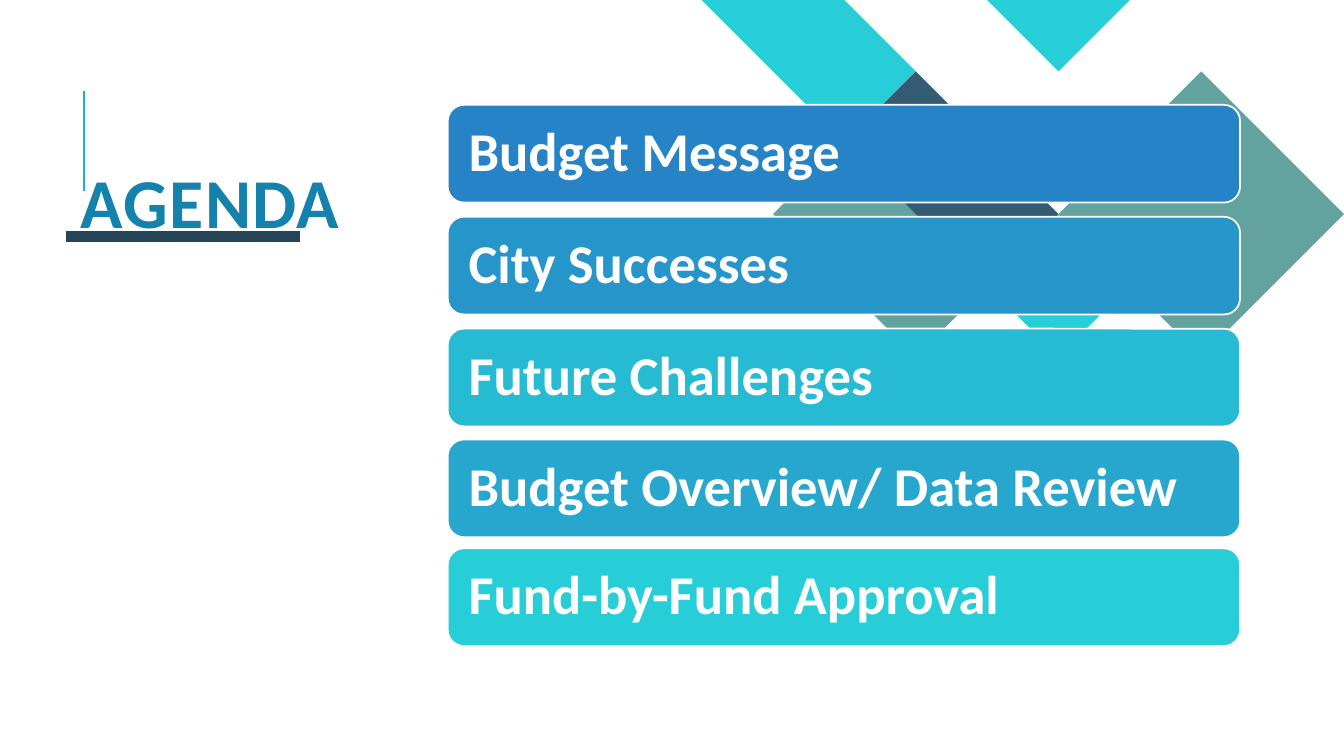
"""Build the agenda slide with its diamond pattern and five topic bars."""

import dataclasses

import lxml.etree
import pptx
import pptx.dml.color
import pptx.enum.shapes
import pptx.enum.text
import pptx.oxml.ns
import pptx.shapes.autoshape
import pptx.slide
import pptx.text.text
import pptx.util

SLIDE_WIDTH = pptx.util.Inches(13.33)
SLIDE_HEIGHT = pptx.util.Inches(7.5)
LATTICE_STEP = pptx.util.Emu(round(SLIDE_HEIGHT * 0.472 / 5))
LATTICE_LEFT = SLIDE_WIDTH - 9 * LATTICE_STEP
BAR_LEFT, BAR_WIDTH, BAR_HEIGHT = 33.31, 58.96, 12.93

Point = tuple[int, int]


@dataclasses.dataclass(frozen=True)
class Tile:
    """One pattern colour with outlines in lattice columns and rows."""

    color: str
    outlines: tuple[tuple[Point, ...], ...]


@dataclasses.dataclass(frozen=True)
class Rule:
    """A straight line with ends in percent of the slide."""

    start: tuple[float, float]
    end: tuple[float, float]
    color: str
    weight: float


@dataclasses.dataclass(frozen=True)
class Bar:
    """One agenda topic with its top in percent of the slide height."""

    topic: str
    top: float
    color: str


TILES = (
    Tile("27CED7", (((3, 1), (2, 0), (0, 0), (2, 2)), ((6, 4), (5, 3), (4, 4), (5, 5)))),
    Tile("62A39F", (((2, 2), (1, 3), (3, 5), (4, 4)),)),
    Tile("27CED7", (((6, 0), (4, 0), (5, 1)),)),
    Tile("335B74", (((3, 1), (2, 2), (4, 4), (5, 3)),)),
    Tile("62A39F", (((9, 3), (7, 1), (5, 3), (7, 5)),)),
)
RULES = (
    Rule((6.23, 25.33), (6.23, 12), "1CADE4", 1.5),
    Rule((4.88, 31.33), (22.36, 31.33), "264457", 8),
)
BARS = (
    Bar("Budget Message", 13.87, "2683C6"),
    Bar("City Successes", 28.67, "2695CA"),
    Bar("Future Challenges", 43.47, "27BAD3"),
    Bar("Budget Overview/ Data Review", 58.13, "27A7CE"),
    Bar("Fund-by-Fund Approval", 72.53, "27CED7"),
)


def across(percent: float) -> pptx.util.Emu:
    """Return a share of the slide width."""
    return pptx.util.Emu(round(SLIDE_WIDTH * percent / 100))


def down(percent: float) -> pptx.util.Emu:
    """Return a share of the slide height."""
    return pptx.util.Emu(round(SLIDE_HEIGHT * percent / 100))


def rgb(color: str) -> pptx.dml.color.RGBColor:
    """Turn a hex string into a colour."""
    return pptx.dml.color.RGBColor.from_string(color)


def write(frame: pptx.text.text.TextFrame, text: str, *, size: float, color: str,
          line_spacing: float, inset: float, tracking: float = 0) -> None:
    """Fill a text frame with one bold, left-aligned paragraph."""
    frame.word_wrap = True
    frame.auto_size = pptx.enum.text.MSO_AUTO_SIZE.NONE
    frame.vertical_anchor = pptx.enum.text.MSO_ANCHOR.MIDDLE
    frame.margin_left = frame.margin_right = across(inset)
    para = frame.paragraphs[0]
    para.alignment = pptx.enum.text.PP_ALIGN.LEFT
    para.line_spacing = line_spacing
    span = para.add_run()
    span.text = text
    span.font.name = "Calibri"
    span.font.size = pptx.util.Pt(size)
    span.font.bold = True
    span.font.color.rgb = rgb(color)
    if tracking:
        span.font._element.set("spc", str(round(tracking * 100)))


def draw_tile(page: pptx.slide.Slide, tile: Tile) -> None:
    """Draw the outlines of a tile as one filled freeform."""
    contours = [
        [(LATTICE_LEFT + column * LATTICE_STEP, row * LATTICE_STEP) for column, row in outline]
        for outline in tile.outlines
    ]
    builder = page.shapes.build_freeform(*contours[0][0])
    for index, contour in enumerate(contours):
        if index:
            builder.move_to(*contour[0])
        builder.add_line_segments(contour[1:], close=True)
    shape = builder.convert_to_shape()
    shape.shadow.inherit = False
    shape.fill.solid()
    shape.fill.fore_color.rgb = rgb(tile.color)
    shape.line.fill.background()


def draw_rule(page: pptx.slide.Slide, rule: Rule) -> None:
    """Draw a straight line without a shadow."""
    line = page.shapes.add_connector(
        pptx.enum.shapes.MSO_CONNECTOR.STRAIGHT,
        across(rule.start[0]), down(rule.start[1]), across(rule.end[0]), down(rule.end[1]),
    )
    line.line.color.rgb = rgb(rule.color)
    line.line.width = pptx.util.Pt(rule.weight)
    lxml.etree.SubElement(line._element.spPr, pptx.oxml.ns.qn("a:effectLst"))


def draw_bar(page: pptx.slide.Slide, bar: Bar) -> None:
    """Draw a rounded bar holding its topic."""
    box = page.shapes.add_shape(
        pptx.enum.shapes.MSO_SHAPE.ROUNDED_RECTANGLE,
        across(BAR_LEFT), down(bar.top), across(BAR_WIDTH), down(BAR_HEIGHT),
    )
    box.shadow.inherit = False
    box.fill.solid()
    box.fill.fore_color.rgb = rgb(bar.color)
    box.line.color.rgb = rgb("FFFFFF")
    box.line.width = pptx.util.Pt(1.25)
    write(box.text_frame, bar.topic, size=39, color="FFFFFF", line_spacing=0.9, inset=1.2)


def place_title(page: pptx.slide.Slide) -> None:
    """Move and format the title placeholder."""
    title = page.shapes.title
    title.left, title.top = across(5.25), down(4)
    title.width, title.height = across(28.06), down(47.2)
    write(title.text_frame, "AGENDA", size=50, color="1482AC",
          line_spacing=0.8, inset=0.75, tracking=1)


def main() -> None:
    """Build and save the deck."""
    deck = pptx.Presentation()
    deck.slide_width, deck.slide_height = SLIDE_WIDTH, SLIDE_HEIGHT
    page = deck.slides.add_slide(deck.slide_layouts.get_by_name("Title Only"))
    place_title(page)
    for tile in TILES:
        draw_tile(page, tile)
    for rule in RULES:
        draw_rule(page, rule)
    for bar in BARS:
        draw_bar(page, bar)
    deck.save("out.pptx")


if __name__ == "__main__":
    main()
